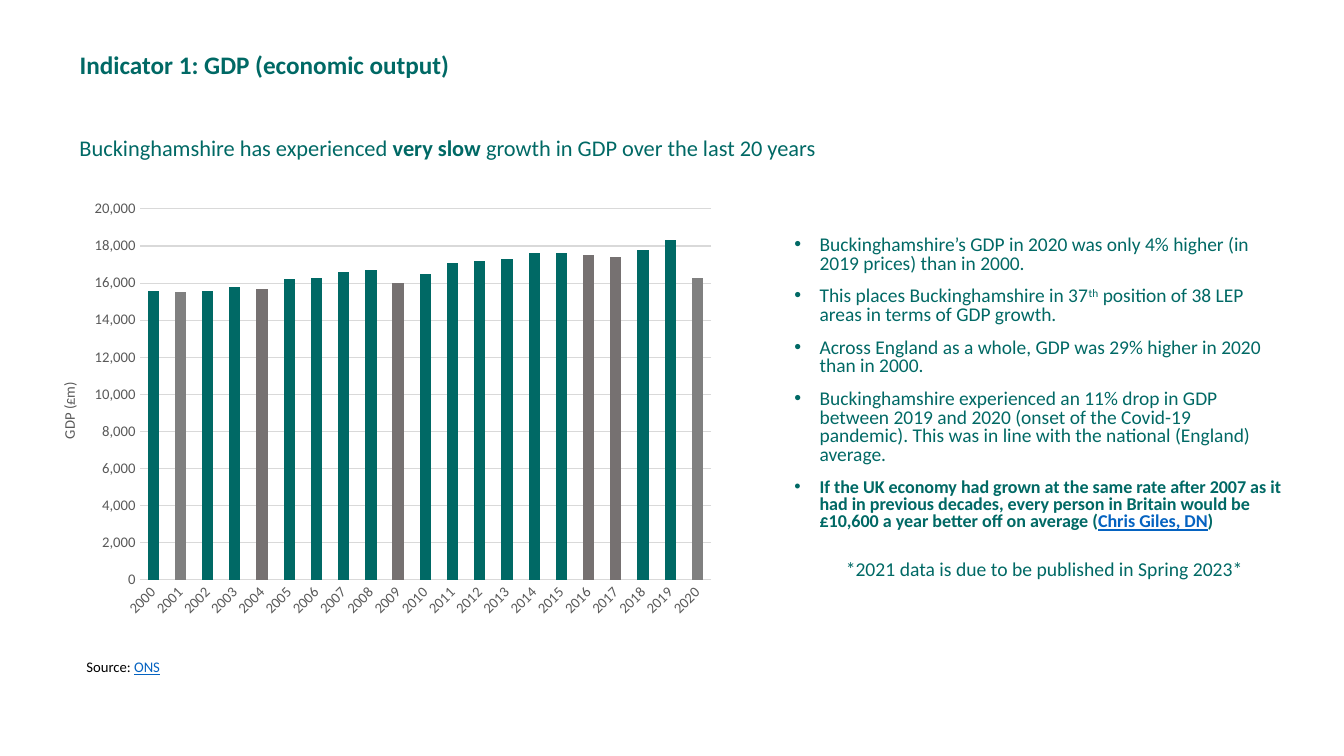
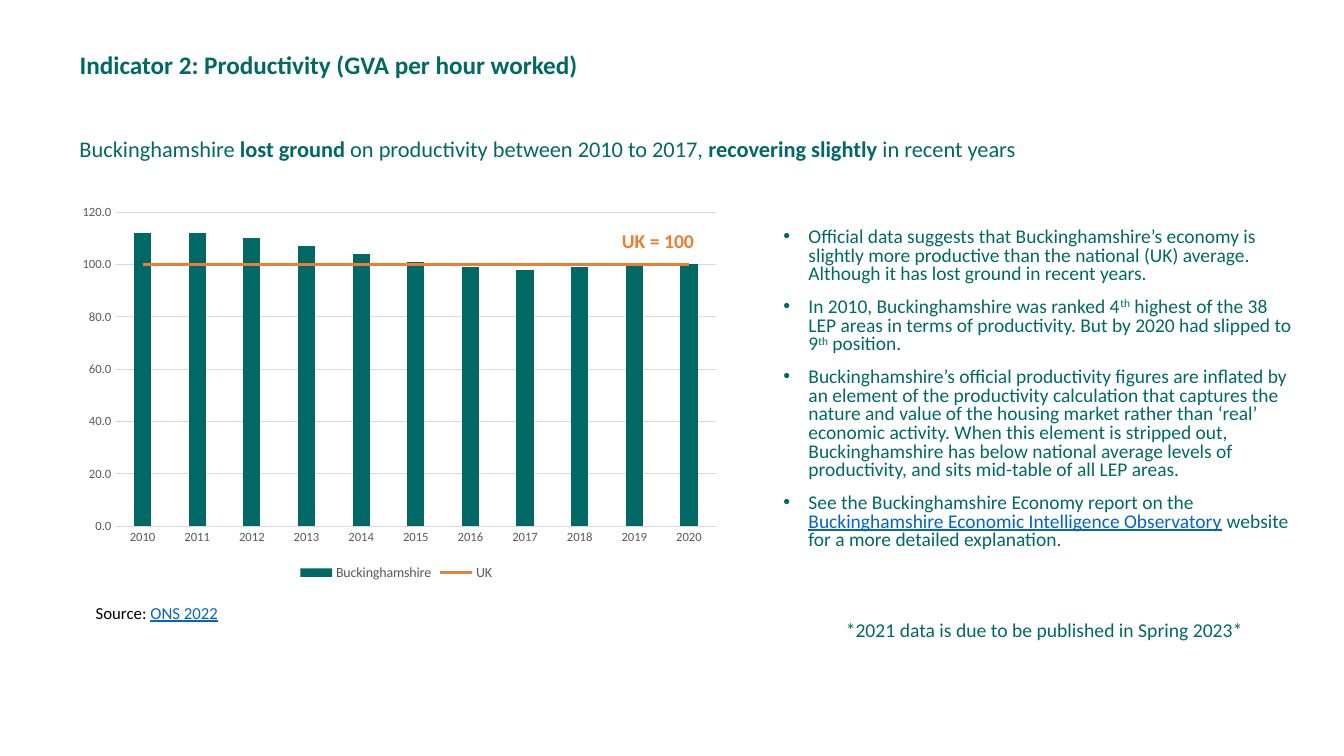
from lxml import etree
from pptx import Presentation
from pptx import util as u
from pptx.chart import data as cd
from pptx.dml import color
from pptx.enum import chart as ec, text as et
from pptx.oxml import ns

TEAL, LINK, ORANGE = "006965", "0563C1", "ED7D31"
BLACK, GREY, RULE = "000000", "595959", "D9D9D9"
SLATE, ASH = "767171", "808080"
FONT = "Calibri"


def rgb(code):
    return color.RGBColor.from_string(code)


def style(font, size, tone, bold=False):
    font.name, font.size, font.bold = FONT, u.Pt(size), bold
    font.color.rgb = rgb(tone)


def run(para, words, size=14, tone=TEAL, bold=False, line=False, sup=False):
    """Add one run of text with its format."""
    piece = para.add_run()
    piece.text = words
    style(piece.font, size, tone, bold)
    if line:
        piece.font.underline = True
    if sup:
        piece.font._element.set("baseline", "30000")


def fill(para, parts, **form):
    """Fill a paragraph from a string or a list of strings and (string, format) pairs."""
    for part in [parts] if isinstance(parts, str) else parts:
        words, own = (part, {}) if isinstance(part, str) else part
        run(para, words, **{**form, **own})


def sub(node, tag, **attrs):
    return etree.SubElement(node, ns.qn(tag), attrs)


def arrange(node, index, inner=False, **frac):
    """Give a chart part a manual layout, in fractions of the chart."""
    for old in node.findall(ns.qn("c:layout")):
        node.remove(old)
    outer = etree.Element(ns.qn("c:layout"))
    hand = sub(outer, "c:manualLayout")
    if inner:
        sub(hand, "c:layoutTarget", val="inner")
    for key in ("x", "y"):
        sub(hand, f"c:{key}Mode", val="edge")
    for key, val in frac.items():
        sub(hand, f"c:{key}", val=str(val))
    node.insert(index, outer)


class Deck:
    def __init__(self):
        self.prs = Presentation()
        self.prs.slide_width, self.prs.slide_height = u.Inches(13.33), u.Inches(7.5)
        self.slide = None

    def page(self, title):
        self.slide = self.prs.slides.add_slide(self.prs.slide_layouts[5])
        head = self.slide.shapes.title
        head.left, head.top, head.width, head.height = map(u.Inches, (0.69, 0.44, 8.07, 0.4))
        frame = head.text_frame
        frame.auto_size = et.MSO_AUTO_SIZE.NONE
        frame.vertical_anchor = et.MSO_ANCHOR.TOP
        frame.paragraphs[0].alignment = et.PP_ALIGN.LEFT
        fill(frame.paragraphs[0], title, size=18, bold=True)

    def frame(self, box):
        frame = self.slide.shapes.add_textbox(*map(u.Inches, box)).text_frame
        frame.word_wrap = True
        return frame

    def text(self, box, parts, **form):
        fill(self.frame(box).paragraphs[0], parts, **form)

    def lead(self, top, parts):
        self.text((0.69, top, 9.87, 0.37), parts, size=16)

    def source(self, box, name, size):
        self.text(box, ["Source: ", (name, dict(tone=LINK, line=True))], size=size, tone=BLACK)

    def note(self, top):
        self.text((8.29, top, 5.05, 0.34), "*2021 data is due to be published in Spring 2023*")

    def bullets(self, box, items):
        frame = self.frame(box)
        for i, item in enumerate(items):
            para = frame.add_paragraph() if i else frame.paragraphs[0]
            para.line_spacing, para.space_before = 0.8, u.Pt(10)
            props = para._p.get_or_add_pPr()
            props.set("marL", str(u.Inches(0.25)))
            props.set("indent", str(-u.Inches(0.25)))
            tone = sub(props, "a:buClr")
            sub(tone, "a:srgbClr", val=TEAL)
            sub(props, "a:buFont", typeface="Arial")
            sub(props, "a:buChar", char="•")
            fill(para, item, size=13.9)

    def chart(self, box, cats, series, plot, top, step, fmt, gap, size):
        """Add a column chart with the shared axis style."""
        data = cd.CategoryChartData(number_format=fmt)
        data.categories = cats
        for name, vals in series.items():
            data.add_series(name, vals)
        chart = self.slide.shapes.add_chart(
            ec.XL_CHART_TYPE.COLUMN_CLUSTERED, *map(u.Inches, box), data).chart
        style(chart.font, size, BLACK)
        chart.has_title = chart.has_legend = False
        bars = chart.plots[0]
        bars.gap_width, bars.overlap, bars.vary_by_categories = gap, -27, False
        self.paint(bars.series[0], TEAL)

        cat, val = chart.category_axis, chart.value_axis
        for axis in (cat, val):
            axis.major_tick_mark = axis.minor_tick_mark = ec.XL_TICK_MARK.NONE
            style(axis.tick_labels.font, size, GREY)
        val.minimum_scale, val.maximum_scale, val.major_unit = 0, top, step
        val.tick_labels.number_format = fmt
        val.tick_labels.number_format_is_linked = False
        val.format.line.fill.background()
        for line in (cat.format.line, val.major_gridlines.format.line):
            line.color.rgb, line.width = rgb(RULE), u.Pt(0.75)
        arrange(chart._chartSpace.chart.plotArea, 0, inner=True, **plot)
        return chart

    def paint(self, bar, tone):
        bar.format.fill.solid()
        bar.format.fill.fore_color.rgb = rgb(tone)

    def slant(self, axis, skip):
        """Turn the labels by 45 degrees and show every skip-th one."""
        node = axis._element
        node.find(ns.qn("c:txPr")).find(ns.qn("a:bodyPr")).set("rot", "-2700000")
        mark = etree.Element(ns.qn("c:tickLblSkip"), val=str(skip))
        node.find(ns.qn("c:noMultiLvlLbl")).addprevious(mark)

    def label(self, axis, words, x, y):
        frame = axis.axis_title.text_frame
        fill(frame.paragraphs[0], words, size=10.5, tone=GREY)
        body = frame._txBody.find(ns.qn("a:bodyPr"))
        body.set("rot", "-5400000")
        body.set("vert", "horz")
        arrange(axis.axis_title._element, 1, x=x, y=y)

    def overlay(self, chart, tone):
        """Draw the last series as a line on the same axes."""
        bars = chart._chartSpace.chart.plotArea.find(ns.qn("c:barChart"))
        ser = bars.findall(ns.qn("c:ser"))[-1]
        flip = ser.find(ns.qn("c:invertIfNegative"))
        if flip is not None:
            ser.remove(flip)
        # makeelement keeps the parser's own element classes
        lines = bars.makeelement(ns.qn("c:lineChart"))
        bars.addnext(lines)
        sub(lines, "c:grouping", val="standard")
        sub(lines, "c:varyColors", val="0")
        lines.append(ser)
        sub(lines, "c:marker", val="1")
        for axis in bars.findall(ns.qn("c:axId")):
            sub(lines, "c:axId", val=axis.get("val"))
        line = chart.plots[1].series[0]
        line.smooth = False
        line.marker.style = ec.XL_MARKER_STYLE.NONE
        line.format.line.color.rgb = rgb(tone)
        line.format.line.width = u.Pt(2.25)

    def legend(self, chart):
        chart.has_legend = True
        chart.legend.position = ec.XL_LEGEND_POSITION.BOTTOM
        chart.legend.include_in_layout = False
        style(chart.legend.font, 10, GREY)


def years(first):
    return [str(year) for year in range(first, 2021)]


def output(deck):
    deck.page("Indicator 1: GDP (economic output)")
    deck.lead(1.28, ["Buckinghamshire has experienced ", ("very slow ", dict(bold=True)),
                     "growth in GDP over the last 20 years"])

    # GDP by year, with the years of decline in grey
    gdp = [15600, 15500, 15600, 15800, 15700, 16200, 16300, 16600, 16700, 16000, 16500,
           17100, 17200, 17300, 17600, 17600, 17500, 17400, 17800, 18300, 16300]
    chart = deck.chart((0.36, 1.9, 6.83, 4.33), years(2000), {"Series 1": gdp},
                       dict(x=0.15, y=0.04, w=0.83, h=0.85),
                       top=20000, step=2000, fmt="#,##0", gap=142, size=10.5)
    falls = {1: ASH, 4: SLATE, 9: SLATE, 16: SLATE, 17: SLATE, 20: ASH}
    for i, tone in falls.items():
        deck.paint(chart.plots[0].series[0].points[i], tone)
    deck.slant(chart.category_axis, 2)
    deck.label(chart.value_axis, "GDP (£m)", 0.03, 0.43)
    deck.source((0.76, 6.48, 1.03, 0.28), "ONS", 10.5)

    # Findings
    strong = dict(size=12.9, bold=True)
    deck.bullets((7.78, 2.3, 5.05, 3.06), [
        "Buckinghamshire’s GDP in 2020 was only 4% higher (in 2019 prices) than in 2000.",
        ["This places Buckinghamshire in 37", ("th", dict(sup=True)),
         " position of 38 LEP areas in terms of GDP growth."],
        "Across England as a whole, GDP was 29% higher in 2020 than in 2000.",
        "Buckinghamshire experienced an 11% drop in GDP between 2019 and 2020 (onset of the "
        "Covid-19 pandemic). This was in line with the national (England) average.",
        [("If the UK economy had grown at the same rate after 2007 as it had in previous "
          "decades, every person in Britain would be £10,600 a year better off on average (",
          strong),
         ("Chris Giles, DN", dict(strong, tone=LINK, line=True)), (")", strong)],
    ])
    deck.note(5.48)


def productivity(deck):
    deck.page("Indicator 2: Productivity (GVA per hour worked)")
    deck.lead(1.29, ["Buckinghamshire ", ("lost ground ", dict(bold=True)),
                     "on productivity between 2010 to 2017, ",
                     ("recovering slightly ", dict(bold=True)), "in recent years"])

    # Index against the UK line
    local = [112, 112, 110, 107, 104, 101, 99, 98, 99, 100, 100]
    chart = deck.chart((0.69, 1.95, 6.48, 3.85), years(2010),
                       {"Buckinghamshire": local, "UK": [100] * len(local)},
                       dict(x=0.07, y=0.04, w=0.92, h=0.81),
                       top=120, step=20, fmt="0.0", gap=219, size=9)
    deck.overlay(chart, ORANGE)
    deck.legend(chart)
    deck.text((6.07, 2.22, 1.46, 0.34), "UK = 100", tone=ORANGE, bold=True)
    deck.source((0.85, 5.93, 2.65, 0.3), "ONS 2022", 12)

    # Findings
    th = ("th", dict(sup=True))
    deck.bullets((7.67, 2.22, 5.28, 3.5), [
        "Official data suggests that Buckinghamshire’s economy is slightly more productive than "
        "the national (UK) average. Although it has lost ground in recent years.",
        ["In 2010, Buckinghamshire was ranked 4", th, " highest of the 38 LEP areas in terms of "
         "productivity. But by 2020 had slipped to 9", th, " position."],
        "Buckinghamshire’s official productivity figures are inflated by an element of the "
        "productivity calculation that captures the nature and value of the housing market "
        "rather than ‘real’ economic activity. When this element is stripped out, "
        "Buckinghamshire has below national average levels of productivity, and sits mid-table "
        "of all LEP areas.",
        ["See the Buckinghamshire Economy report on the ",
         ("Buckinghamshire Economic Intelligence Observatory", dict(tone=LINK, line=True)),
         " website for a more detailed explanation."],
    ])
    deck.note(6.08)


def main():
    deck = Deck()
    output(deck)
    productivity(deck)
    deck.prs.save("out.pptx")


if __name__ == "__main__":
    main()
